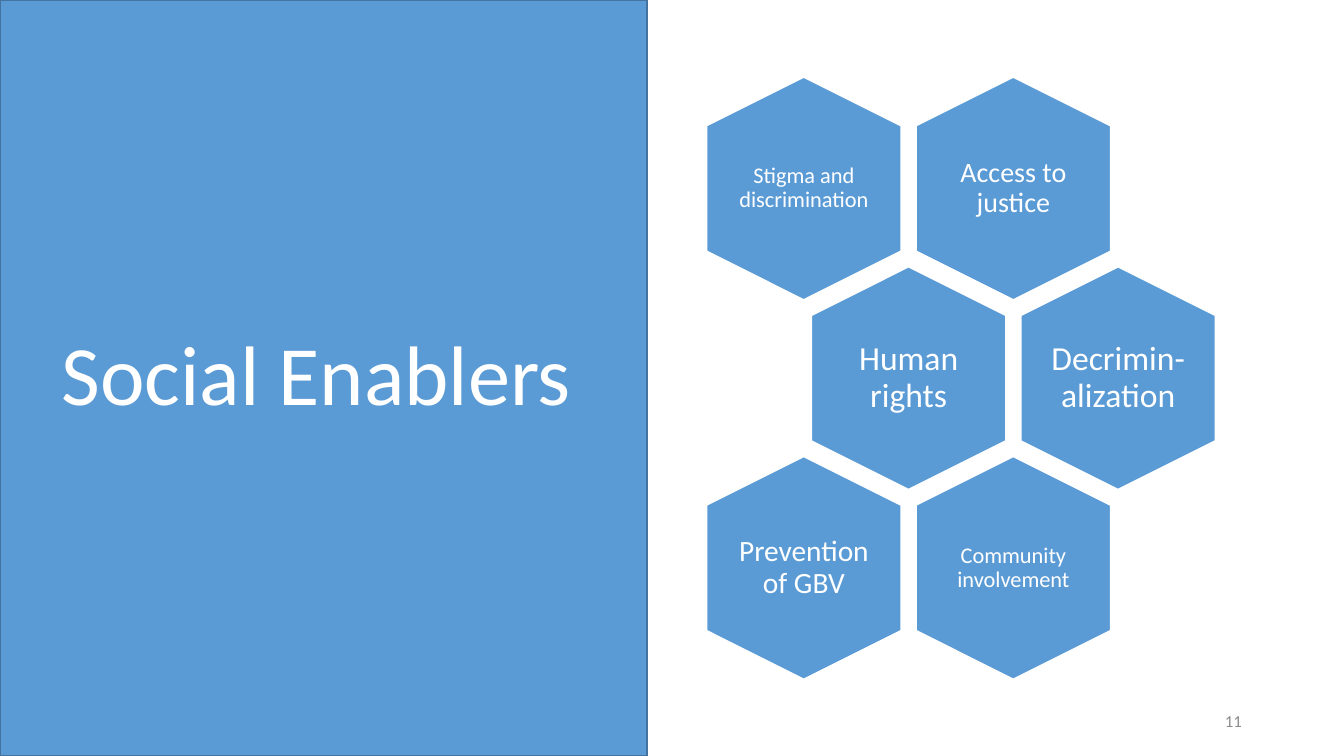
from pptx import Presentation
from pptx.dml.color import RGBColor
from pptx.enum.shapes import MSO_SHAPE
from pptx.enum.text import MSO_ANCHOR, MSO_AUTO_SIZE, PP_ALIGN
from pptx.util import Cm, Pt


def paint(target, color):
    if hasattr(target, "solid"):
        target.solid()
        target.fore_color.rgb = RGBColor.from_string(color)
    else:
        target.color.rgb = RGBColor.from_string(color)


def write(box, text, size, color, align, pad=0, space=0.9):
    frame = box.text_frame
    frame.text = text
    style = {
        "word_wrap": True,
        "auto_size": MSO_AUTO_SIZE.NONE,
        "vertical_anchor": MSO_ANCHOR.MIDDLE,
        "margin_left": Cm(pad),
        "margin_right": Cm(pad),
        "margin_top": Cm(0),
        "margin_bottom": Cm(0),
    }
    for key, value in style.items():
        setattr(frame, key, value)
    para = frame.paragraphs[0]
    for key, value in {"alignment": align, "line_spacing": space}.items():
        setattr(para, key, value)
    font = para.runs[0].font
    for key, value in {"name": "Calibri", "size": Pt(size)}.items():
        setattr(font, key, value)
    paint(font, color)


deck = Presentation()
deck.slide_width, deck.slide_height = Cm(33.87), Cm(19.05)
slide = deck.slides.add_slide(deck.slide_layouts[5])
shapes = slide.shapes

title = shapes.title
place = {"left": 1.3, "top": 8.61, "width": 29.21, "height": 1.83}
for key, value in place.items():
    setattr(title, key, Cm(value))
write(title, "Social Enablers", 60.3, "FFFFFF", PP_ALIGN.LEFT, 0.25)

panel = shapes.add_shape(MSO_SHAPE.RECTANGLE, 0, 0, Cm(16.31), Cm(19.05))
panel.shadow.inherit = False
paint(panel.fill, "5B9BD5")
paint(panel.line, "43739E")
panel.line.width = Pt(1)
title.element.addprevious(panel.element)

rows = [
    [("Stigma and discrimination", 16), ("Access to justice", 20)],
    [("Human rights", 24), ("Decrimin-alization", 24)],
    [("Prevention of GBV", 21), ("Community involvement", 16)],
]
for row, cells in enumerate(rows):
    for col, (text, size) in enumerate(cells):
        left = 17.45 + 5.28 * col + 2.64 * (row % 2)
        top = 2.3 + 4.78 * row
        tile = shapes.add_shape(MSO_SHAPE.HEXAGON, Cm(left), Cm(top), Cm(5.61), Cm(4.9))
        tile.rotation = 90
        tile.adjustments[0] = 0.25
        tile.shadow.inherit = False
        paint(tile.fill, "5B9BD5")
        paint(tile.line, "FFFFFF")
        tile.line.width = Pt(1)
        label = shapes.add_textbox(Cm(left + 1.12), Cm(top + 0.52), Cm(3.38), Cm(3.86))
        write(label, text, size, "FFFFFF", PP_ALIGN.CENTER)

number = shapes.add_textbox(Cm(23.93), Cm(17.65), Cm(7.62), Cm(1.02))
write(number, "11", 12, "8C8C8C", PP_ALIGN.RIGHT, 0.25, 1.0)

deck.save("out.pptx")
